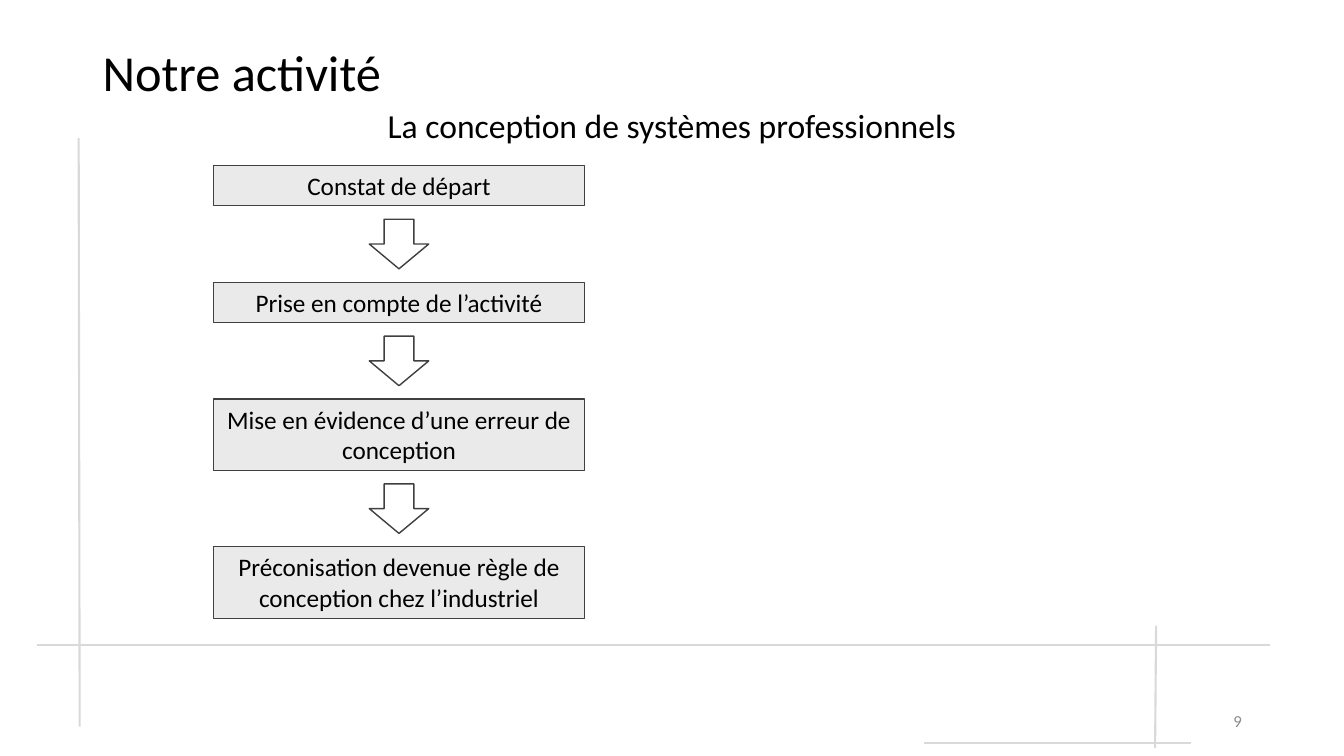
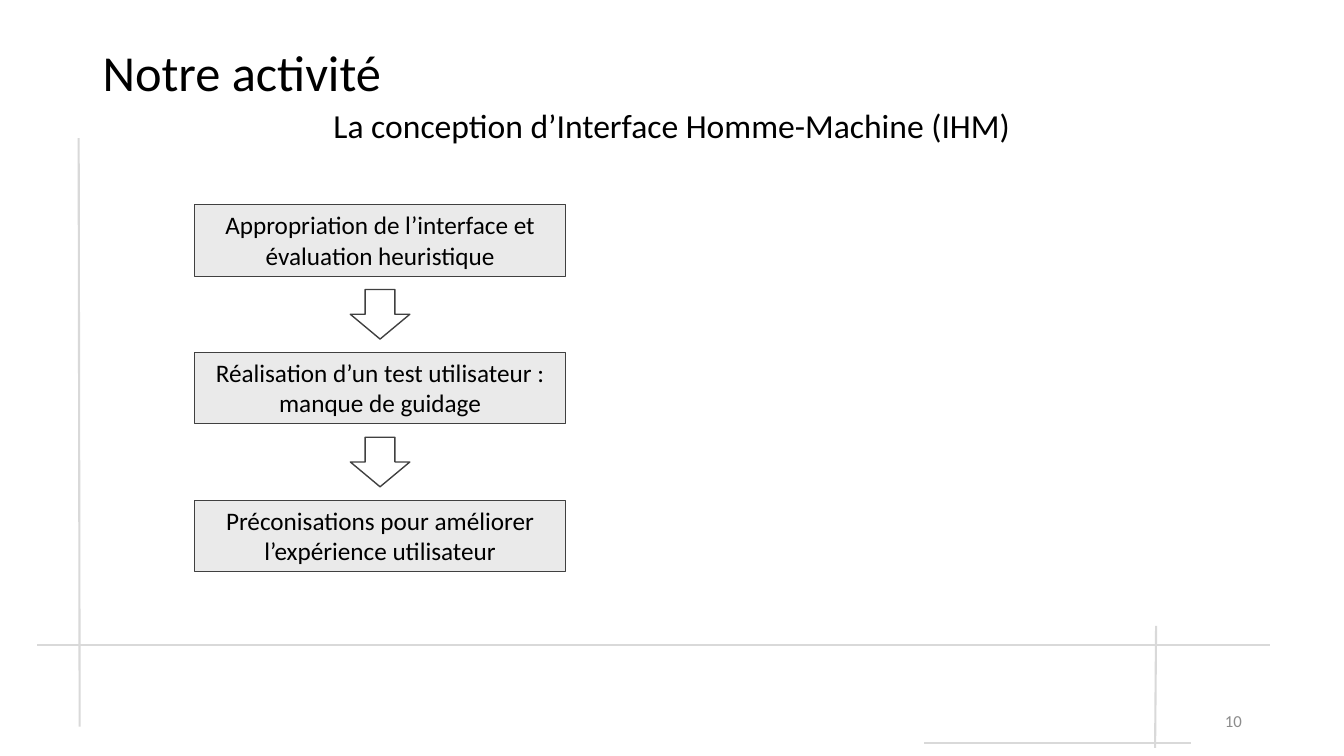
from dataclasses import dataclass

from pptx import Presentation
from pptx.dml.color import RGBColor
from pptx.enum.shapes import MSO_CONNECTOR as Connector, MSO_SHAPE as Preset
from pptx.enum.text import MSO_ANCHOR as Anchor, MSO_AUTO_SIZE as AutoSize, PP_ALIGN as Align
from pptx.oxml.ns import qn
from pptx.util import Pt
from lxml.etree import SubElement


@dataclass(frozen=True)
class Theme:
    font: str = "Calibri"
    ink: str = "000000"
    muted: str = "8C8C8C"
    rule: str = "D9D9D9"
    panel: str = "EAEAEA"
    outline: str = "404040"
    white: str = "FFFFFF"
    title: int = 36
    subtitle: int = 24
    body: int = 18
    footer: int = 12


THEME = Theme()

# Each step is a label and the number of lines it takes.
SLIDES = [
    {
        "number": 9,
        "title": "Notre activité",
        "subtitle": "La conception de systèmes professionnels",
        "origin": (152.5, 118),
        "steps": [
            ("Constat de départ", 1),
            ("Prise en compte de l’activité", 1),
            ("Mise en évidence d’une erreur de conception", 2),
            ("Préconisation devenue règle de conception chez l’industriel", 2),
        ],
    },
    {
        "number": 10,
        "title": "Notre activité",
        "subtitle": "La conception d’Interface Homme-Machine (IHM)",
        "origin": (139, 146.2),
        "steps": [
            ("Appropriation de l’interface et évaluation heuristique", 2),
            ("Réalisation d’un test utilisateur : manque de guidage", 2),
            ("Préconisations pour améliorer l’expérience utilisateur", 2),
        ],
    },
]

# Start x, start y, end x, end y
RULES = [
    (56.2, 98.6, 56.9, 519.1),
    (26.6, 460.8, 907.2, 460.8),
    (825.8, 447.1, 825.1, 534.2),
    (660.2, 530.6, 851, 530.6),
]

TITLE_AREA = (66.2, 28.8, 828, 50.4)
SUBTITLE_AREA = (218.2, 74.9, 523.4, 64.8)
NUMBER_AREA = (678.2, 500.4, 216, 28.8)

STEP_WIDTH = 265
STEP_HEIGHTS = {1: 29.1, 2: 51.1}
ARROW_WIDTH, ARROW_HEIGHT = 42.5, 35.4
ARROW_MARGIN = 9.5


def rgb(color):
    return RGBColor.from_string(color)


def write(shape, text, size, color=THEME.ink, align=Align.LEFT, anchor=Anchor.MIDDLE, spacing=None):
    frame = shape.text_frame
    frame.word_wrap = True
    frame.vertical_anchor = anchor
    para = frame.paragraphs[0]
    para.alignment = align
    para.line_spacing = spacing
    span = para.add_run()
    span.text = text
    span.font.name = THEME.font
    span.font.size = Pt(size)
    span.font.color.rgb = rgb(color)


def add_text(page, area, text, size, **style):
    box = page.shapes.add_textbox(*map(Pt, area))
    write(box, text, size, **style)


def add_block(page, preset, area, fill, weight):
    block = page.shapes.add_shape(preset, *map(Pt, area))
    block.shadow.inherit = False
    block.fill.solid()
    block.fill.fore_color.rgb = rgb(fill)
    block.line.color.rgb = rgb(THEME.outline)
    block.line.width = Pt(weight)
    return block


def add_rule(page, ends):
    rule = page.shapes.add_connector(Connector.STRAIGHT, *map(Pt, ends))
    rule.line.color.rgb = rgb(THEME.rule)
    rule.line.width = Pt(1.5)
    SubElement(rule._element.spPr, qn("a:effectLst"))


def add_flow(page, origin, steps):
    """Stack the steps downwards, with a centred arrow between neighbours."""
    left, top = origin
    arrow_left = left + (STEP_WIDTH - ARROW_WIDTH) / 2
    for index, (label, lines) in enumerate(steps):
        if index:
            arrow_area = (arrow_left, top + ARROW_MARGIN, ARROW_WIDTH, ARROW_HEIGHT)
            add_block(page, Preset.DOWN_ARROW, arrow_area, THEME.white, 1)
            top += ARROW_HEIGHT + 2 * ARROW_MARGIN
        height = STEP_HEIGHTS[lines]
        step = add_block(page, Preset.RECTANGLE, (left, top, STEP_WIDTH, height), THEME.panel, 0.75)
        write(step, label, THEME.body, align=Align.CENTER, anchor=Anchor.TOP)
        step.text_frame.auto_size = AutoSize.SHAPE_TO_FIT_TEXT
        top += height


def add_page(deck, content):
    page = deck.slides.add_slide(deck.slide_layouts[6])
    for ends in RULES:
        add_rule(page, ends)
    add_text(page, TITLE_AREA, content["title"], THEME.title, spacing=0.9)
    add_text(page, SUBTITLE_AREA, content["subtitle"], THEME.subtitle,
             align=Align.CENTER, anchor=Anchor.TOP, spacing=0.9)
    add_flow(page, content["origin"], content["steps"])
    add_text(page, NUMBER_AREA, str(content["number"]), THEME.footer,
             color=THEME.muted, align=Align.RIGHT)


def main():
    deck = Presentation()
    deck.slide_width, deck.slide_height = Pt(960), Pt(540)
    for content in SLIDES:
        add_page(deck, content)
    deck.save("out.pptx")


if __name__ == "__main__":
    main()
